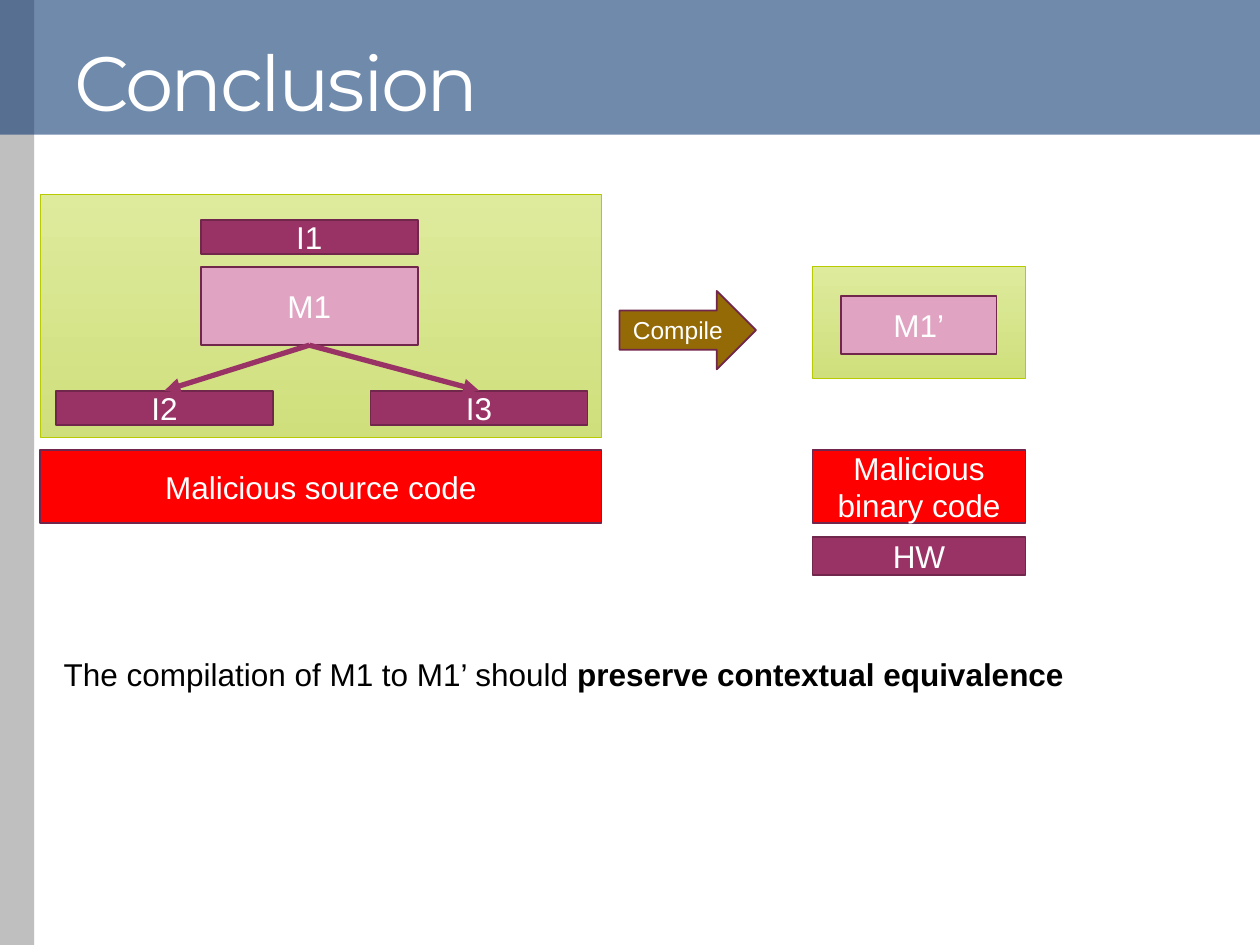
from lxml.etree import SubElement
from pptx import Presentation
from pptx.dml.color import RGBColor
from pptx.enum.shapes import MSO_CONNECTOR, MSO_SHAPE
from pptx.enum.text import MSO_ANCHOR, MSO_AUTO_SIZE, PP_ALIGN
from pptx.oxml.ns import qn
from pptx.util import Pt

HUES = {
    "white": "FFFFFF", "black": "000000", "grey": "BFBFBF", "navy": "123C75",
    "plum": "993366", "pink": "E0A3C2", "edge": "71264B", "brown": "936A06",
    "red": "FF0000", "lime": "B8CB01", "top": "DEEB9D", "base": "CFDF7C",
}
RGB = {name: RGBColor.from_string(code) for name, code in HUES.items()}


def write(para, text, hue="white", **extra):
    """Add a run in the house font, with any extra font values."""
    run = para.add_run()
    run.text = text
    form = {"name": "Arial", "size": Pt(18), "bold": False} | extra
    for key, value in form.items():
        setattr(run.font, key, value)
    run.font.color.rgb = RGB[hue]
    return run


def block(place, fill=None, edge=None, width=1, kind=MSO_SHAPE.RECTANGLE):
    """Add a filled shape; without a fill hue it gets the green gradient."""
    shape = slide.shapes.add_shape(kind, *map(Pt, place))
    shape.shadow.inherit = False
    if fill:
        shape.fill.solid()
        shape.fill.fore_color.rgb = RGB[fill]
    else:
        shape.fill.gradient()
        shape.fill.gradient_angle = 270
        for stop, hue in zip(shape.fill.gradient_stops, ("top", "base")):
            stop.color.rgb = RGB[hue]
    if edge:
        shape.line.color.rgb = RGB[edge]
        shape.line.width = Pt(width)
    else:
        shape.line.fill.background()
    return shape


deck = Presentation()
deck.slide_width, deck.slide_height = Pt(720), Pt(540)
slide = deck.slides.add_slide(deck.slide_layouts[6])

# Side strip and title bar
block((0, 0, 19.5, 540), "grey")
bar = block((0, 0, 720, 77), "navy")
tint = bar.fill._xPr.find(".//" + qn("a:srgbClr"))
SubElement(tint, qn("a:alpha"), val="60000")
frame = bar.text_frame
frame.vertical_anchor = MSO_ANCHOR.BOTTOM
frame.margin_left = Pt(42.5)
title = frame.paragraphs[0]
title.alignment = PP_ALIGN.LEFT
title.line_spacing = 0.9
run = write(title, "Conclusion", name="Montserrat", size=Pt(44))
run.font._element.set("spc", "-150")

# Green panels: source on the left, binary on the right
LEFT, WIDE = 23, 320.75
RIGHT, SLIM = 464.25, 121.75
block((LEFT, 111, WIDE, 139), edge="lime", width=0.5)
block((RIGHT, 152.25, SLIM, 63.75), edge="lime", width=0.5)

# Labelled boxes
MID, UNIT, THIN = 114.75, 124, 19.5
LOW, CODE = 223.25, (257, 42)
parts = {
    "M1": ((MID, 152.5, UNIT, 44.75), "pink"),
    "I1": ((MID, 125.75, UNIT, THIN), "plum"),
    "I2": ((32, LOW, UNIT, THIN), "plum"),
    "I3": ((211.75, LOW, UNIT, THIN), "plum"),
    "Compile": ((354, 166.25, 78, 44.75), "brown"),
    "M1’": ((480.5, 169, 89, 33.5), "pink"),
    "HW": ((RIGHT, 306.75, SLIM, 22), "plum"),
    "Malicious source code": ((LEFT, CODE[0], WIDE, CODE[1]), "red"),
    "Malicious binary code": ((RIGHT, CODE[0], SLIM, CODE[1]), "red"),
}
boxes = {}
for text, (place, fill) in parts.items():
    arrow = text == "Compile"
    kind = MSO_SHAPE.RIGHT_ARROW if arrow else MSO_SHAPE.RECTANGLE
    box = boxes[text] = block(place, fill, "edge", kind=kind)
    frame = box.text_frame
    frame.word_wrap = True
    frame.vertical_anchor = MSO_ANCHOR.MIDDLE
    for side in ("left", "right", "top", "bottom"):
        setattr(frame, f"margin_{side}", 0)
    para = frame.paragraphs[0]
    para.alignment = PP_ALIGN.CENTER
    write(para, text, size=Pt(14 if arrow else 18))

# Arrows from the module to its lower interfaces
for goal in ("I2", "I3"):
    link = slide.shapes.add_connector(MSO_CONNECTOR.STRAIGHT, 0, 0, 0, 0)
    link.begin_connect(boxes["M1"], 2)
    link.end_connect(boxes[goal], 0)
    link.line.color.rgb = RGB["plum"]
    link.line.width = Pt(3)
    SubElement(link.line._get_or_add_ln(), qn("a:tailEnd"), type="triangle")
    SubElement(link._element.spPr, qn("a:effectLst"))

# Closing statement
note = slide.shapes.add_textbox(*map(Pt, (29.25, 371, 591, 29))).text_frame
note.word_wrap = False
note.auto_size = MSO_AUTO_SIZE.SHAPE_TO_FIT_TEXT
para = note.paragraphs[0]
write(para, "The compilation of M1 to M1’ should ", "black")
write(para, "preserve contextual equivalence", "black", bold=True)

deck.save("out.pptx")
